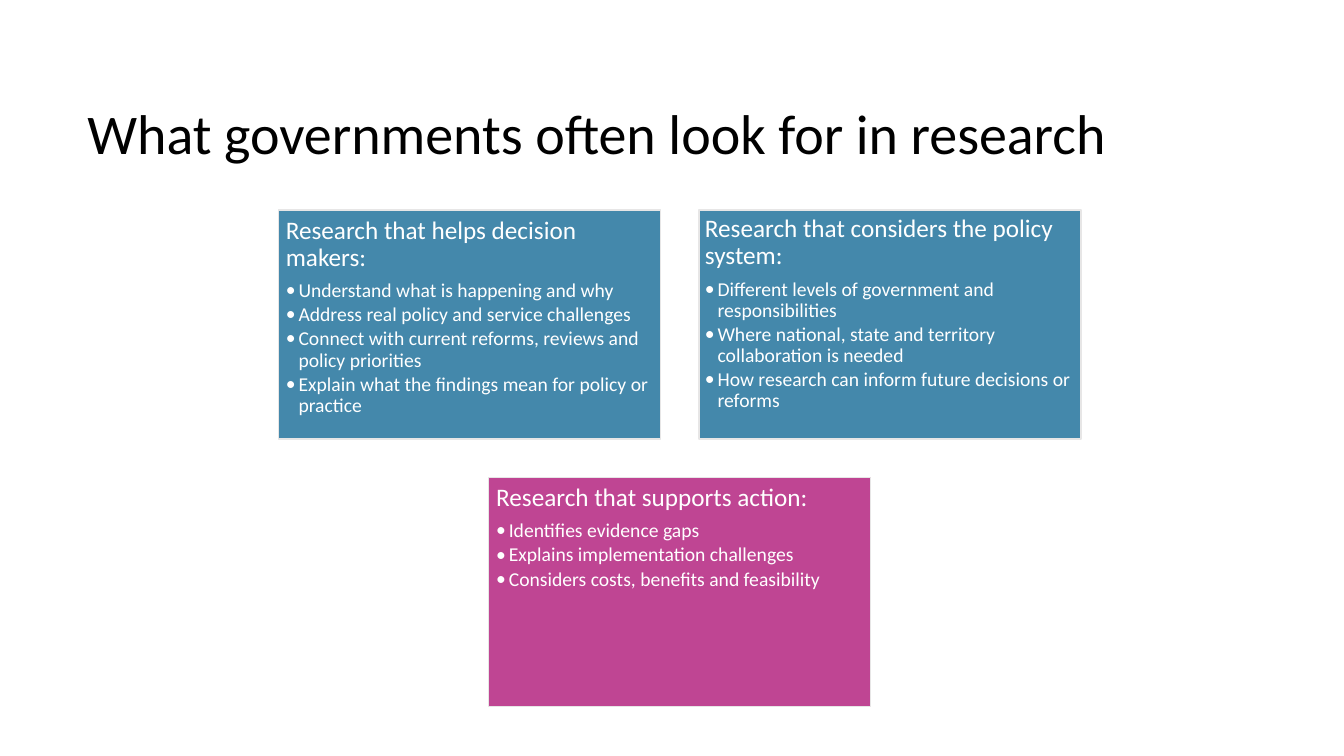
from lxml import etree
from pptx import Presentation
from pptx import util as u
from pptx.dml.color import RGBColor
from pptx.enum import shapes, text
from pptx.oxml.ns import qn

FONT = "Calibri"
BLUE, PINK, WHITE, BLACK, BORDER = "4488AB", "BF4593", "FFFFFF", "000000", "E7E6E6"
LEFT, TOP, WIDTH, HEIGHT, GAP = 198.8, 149.9, 273, 163.6, 27.4
HANGING = 9

CARDS = [
    (0, 0, BLUE, 5.4, "Research that helps decision makers:", [
        "Understand what is happening and why",
        "Address real policy and service challenges",
        "Connect with current reforms, reviews and policy priorities",
        "Explain what the findings mean for policy or practice",
    ]),
    (1, 0, BLUE, 4.3, "Research that considers the policy system:", [
        "Different levels of government and responsibilities",
        "Where national, state and territory collaboration is needed",
        "How research can inform future decisions or reforms",
    ]),
    (0.5, 1, PINK, 5.4, "Research that supports action:", [
        "Identifies evidence gaps",
        "Explains implementation challenges",
        "Considers costs, benefits and feasibility",
    ]),
]


def color(value):
    return RGBColor.from_string(value)


def set_all(target, values):
    for name, value in values.items():
        setattr(target, name, value)


def add_bullet(paragraph):
    properties = paragraph._p.get_or_add_pPr()
    properties.set("marL", str(u.Pt(HANGING)))
    properties.set("indent", str(-u.Pt(HANGING)))
    bullet_font = etree.SubElement(properties, qn("a:buFont"))
    bullet_font.set("typeface", FONT)
    bullet = etree.SubElement(properties, qn("a:buChar"))
    bullet.set("char", "•")


def write_paragraph(paragraph, content, size, ink, space_after=0):
    set_all(paragraph, {
        "text": content,
        "alignment": text.PP_ALIGN.LEFT,
        "line_spacing": 0.9,
        "space_after": u.Pt(space_after),
    })
    set_all(paragraph.font, {"name": FONT, "size": u.Pt(size)})
    paragraph.font.color.rgb = color(ink)


def add_title(slide, content):
    box = slide.shapes.add_textbox(u.Pt(55.4), u.Pt(45.4), u.Pt(828), u.Pt(104.4))
    set_all(box.text_frame, {
        "word_wrap": True,
        "vertical_anchor": text.MSO_ANCHOR.MIDDLE,
    })
    write_paragraph(box.text_frame.paragraphs[0], content, 40, BLACK)


def add_card(slide, column, row, fill, inset, heading, points):
    shape = slide.shapes.add_shape(
        shapes.MSO_SHAPE.RECTANGLE,
        u.Pt(LEFT + column * (WIDTH + GAP)),
        u.Pt(TOP + row * (HEIGHT + GAP)),
        u.Pt(WIDTH),
        u.Pt(HEIGHT),
    )
    shape.shadow.inherit = False
    shape.fill.solid()
    shape.fill.fore_color.rgb = color(fill)
    shape.line.color.rgb = color(BORDER)
    shape.line.width = u.Pt(1)
    frame = shape.text_frame
    sides = ("left", "top", "right", "bottom")
    set_all(frame, {f"margin_{side}": u.Pt(inset) for side in sides})
    set_all(frame, {"word_wrap": True, "vertical_anchor": text.MSO_ANCHOR.TOP})
    write_paragraph(frame.paragraphs[0], heading, 18, WHITE, 6.3)
    for point in points:
        paragraph = frame.add_paragraph()
        paragraph.level = 1
        add_bullet(paragraph)
        write_paragraph(paragraph, point, 14, WHITE, 2.1)


def main():
    presentation = Presentation()
    set_all(presentation, {"slide_width": u.Pt(960), "slide_height": u.Pt(540)})
    slide = presentation.slides.add_slide(presentation.slide_layouts[6])
    add_title(slide, "What governments often look for in research")
    for card in CARDS:
        add_card(slide, *card)
    presentation.save("out.pptx")


if __name__ == "__main__":
    main()
